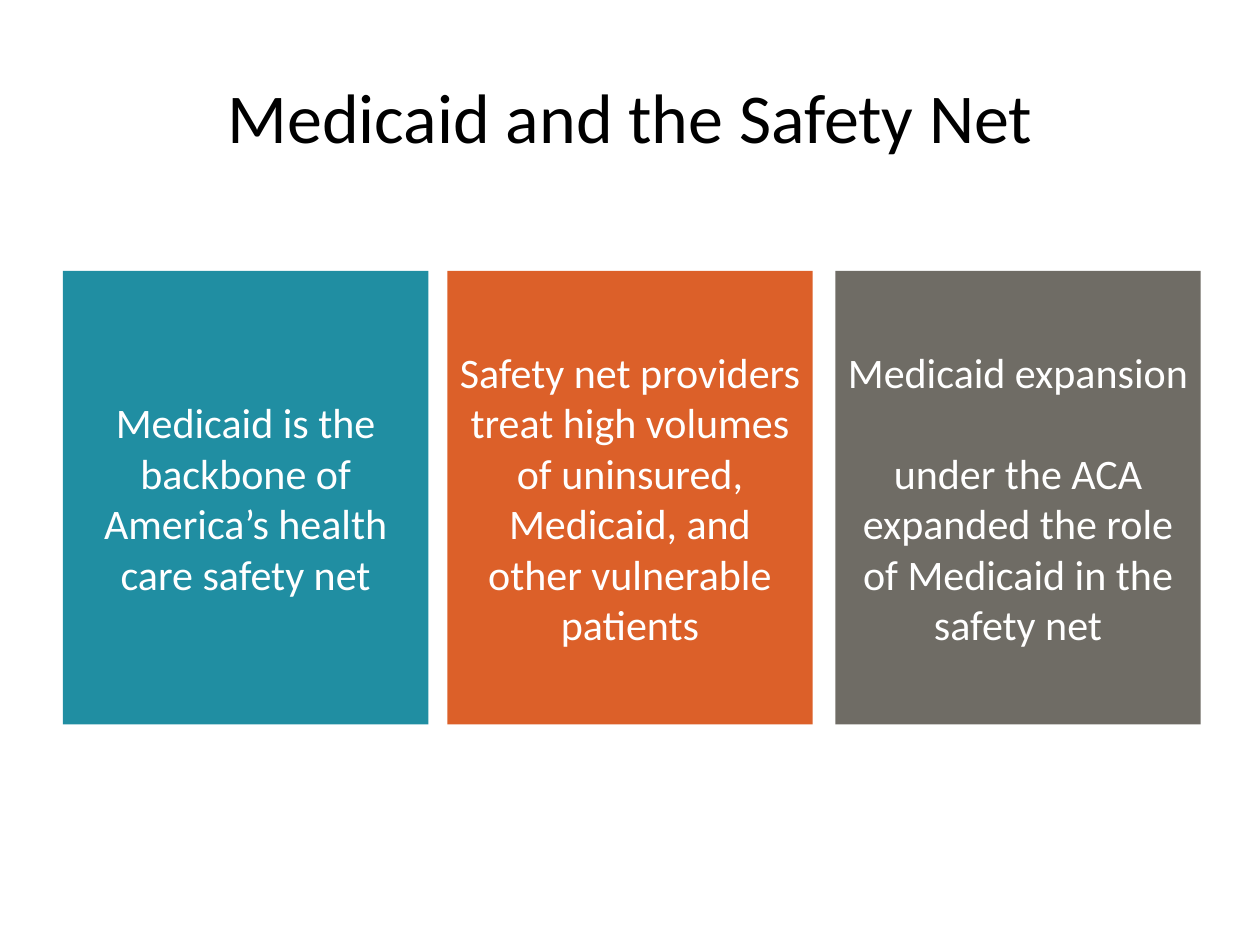
from dataclasses import dataclass

from pptx import Presentation
from pptx.dml.color import RGBColor
from pptx.enum.shapes import MSO_SHAPE
from pptx.enum.text import MSO_ANCHOR, PP_ALIGN
from pptx.shapes.autoshape import Shape
from pptx.slide import Slide
from pptx.util import Inches, Pt

RECTANGLE = MSO_SHAPE.RECTANGLE
MIDDLE = MSO_ANCHOR.MIDDLE
CENTER = PP_ALIGN.CENTER
TITLE_ONLY_LAYOUT = 5


@dataclass(frozen=True)
class Theme:
    font: str = "Calibri"
    title_size: int = 40
    panel_size: int = 24
    paragraph_gap: int = 29
    black: str = "000000"
    white: str = "FFFFFF"
    teal: str = "208EA2"
    orange: str = "DC6029"
    gray: str = "6F6C65"


@dataclass(frozen=True)
class Panel:
    left: float
    fill: str
    paragraphs: tuple[str, ...]


THEME = Theme()
PANEL_TOP, PANEL_WIDTH, PANEL_HEIGHT = 2.15, 2.9, 3.6
PANELS = (
    Panel(0.5, THEME.teal,
          ("Medicaid is the backbone of America’s health care safety net",)),
    Panel(3.55, THEME.orange,
          ("Safety net providers treat high volumes of uninsured, Medicaid, "
           "and other vulnerable patients",)),
    Panel(6.63, THEME.gray,
          ("Medicaid expansion",
           "under the ACA expanded the role of Medicaid in the safety net")),
)


def write_text(shape: Shape, paragraphs: tuple[str, ...], size: int, color: str) -> None:
    """Write centred paragraphs, with a gap before each one but the first."""
    frame = shape.text_frame
    frame.text = "\n".join(paragraphs)
    frame.word_wrap = True
    frame.vertical_anchor = MIDDLE
    font_format = {"name": THEME.font, "size": Pt(size)}
    for index, paragraph in enumerate(frame.paragraphs):
        paragraph.alignment = CENTER
        if index:
            paragraph.space_before = Pt(THEME.paragraph_gap)
        font = paragraph.runs[0].font
        for name, value in font_format.items():
            setattr(font, name, value)
        font.color.rgb = RGBColor.from_string(color)


def add_title(slide: Slide, text: str) -> None:
    title = slide.shapes.title
    bounds = {"left": 0.5, "top": 0.33, "width": 9, "height": 1.17}
    for name, value in bounds.items():
        setattr(title, name, Inches(value))
    write_text(title, (text,), THEME.title_size, THEME.black)


def add_panel(slide: Slide, panel: Panel) -> None:
    shape = slide.shapes.add_shape(
        RECTANGLE, Inches(panel.left), Inches(PANEL_TOP),
        Inches(PANEL_WIDTH), Inches(PANEL_HEIGHT))
    shape.shadow.inherit = False
    shape.fill.solid()
    shape.fill.fore_color.rgb = RGBColor.from_string(panel.fill)
    shape.line.fill.background()
    for side in ("left", "top", "right", "bottom"):
        setattr(shape.text_frame, f"margin_{side}", Inches(0.1))
    write_text(shape, panel.paragraphs, THEME.panel_size, THEME.white)


def main() -> None:
    presentation = Presentation()
    presentation.slide_width = Inches(10)
    presentation.slide_height = Inches(7.5)
    slide = presentation.slides.add_slide(presentation.slide_layouts[TITLE_ONLY_LAYOUT])
    add_title(slide, "Medicaid and the Safety Net")
    for panel in PANELS:
        add_panel(slide, panel)
    presentation.save("out.pptx")


if __name__ == "__main__":
    main()
